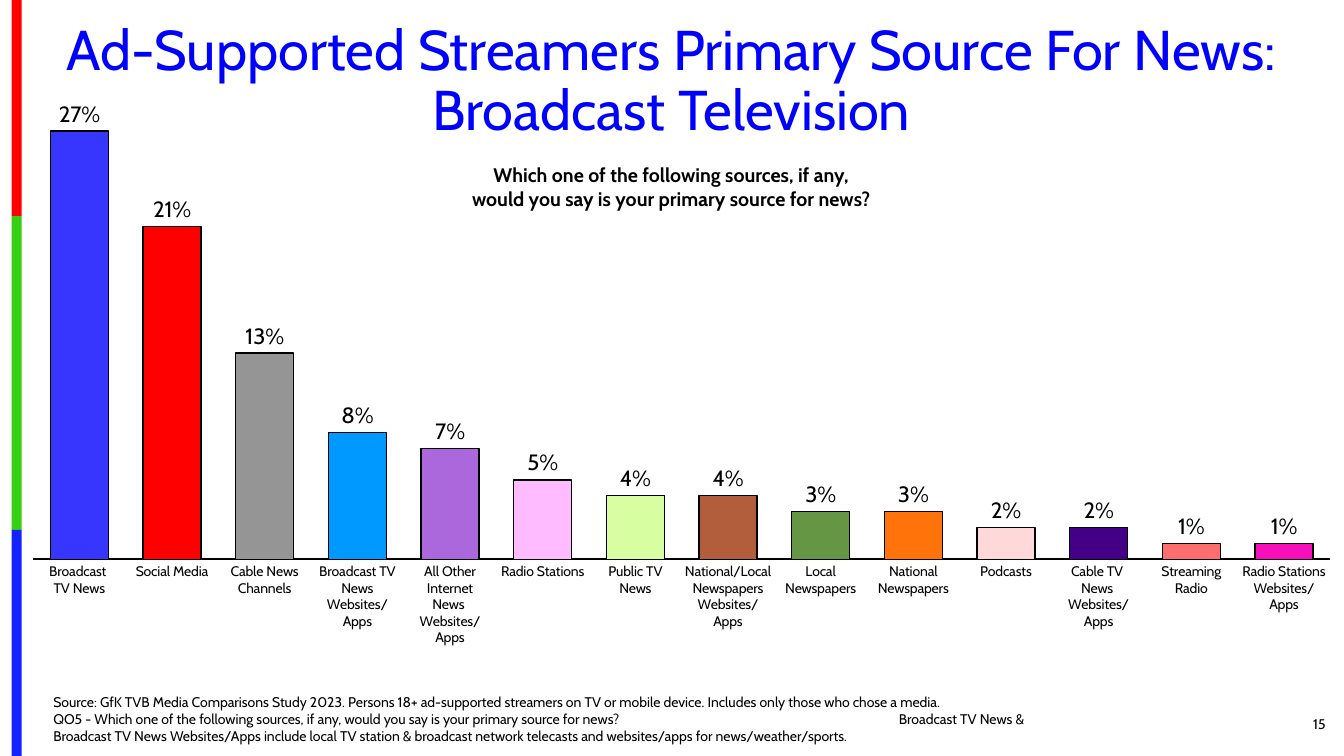
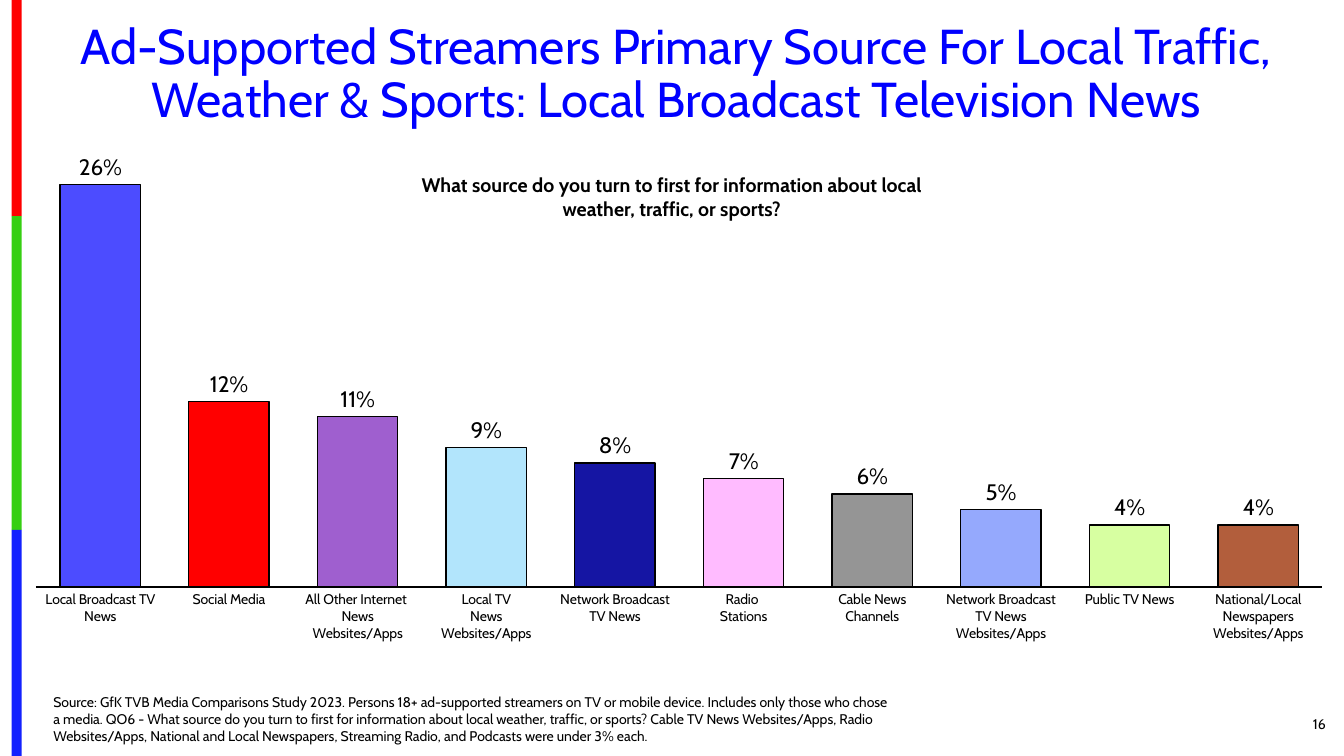
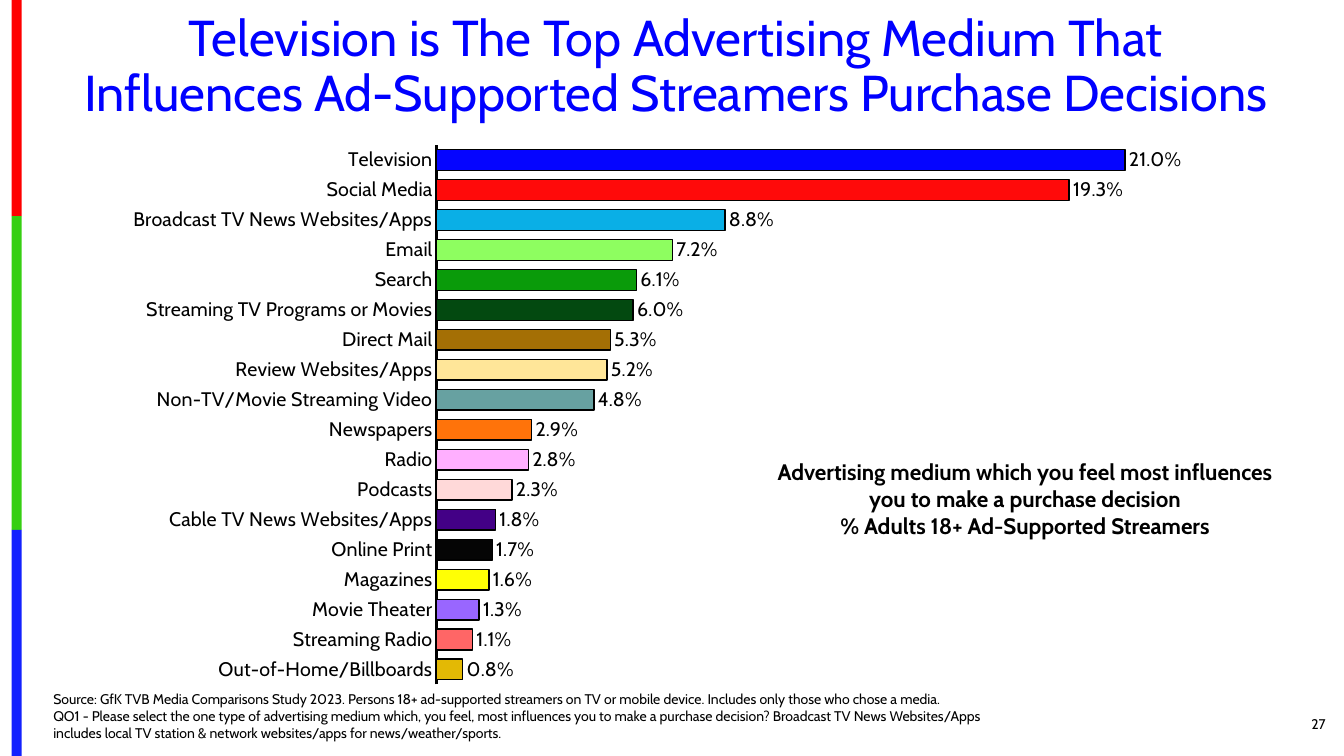
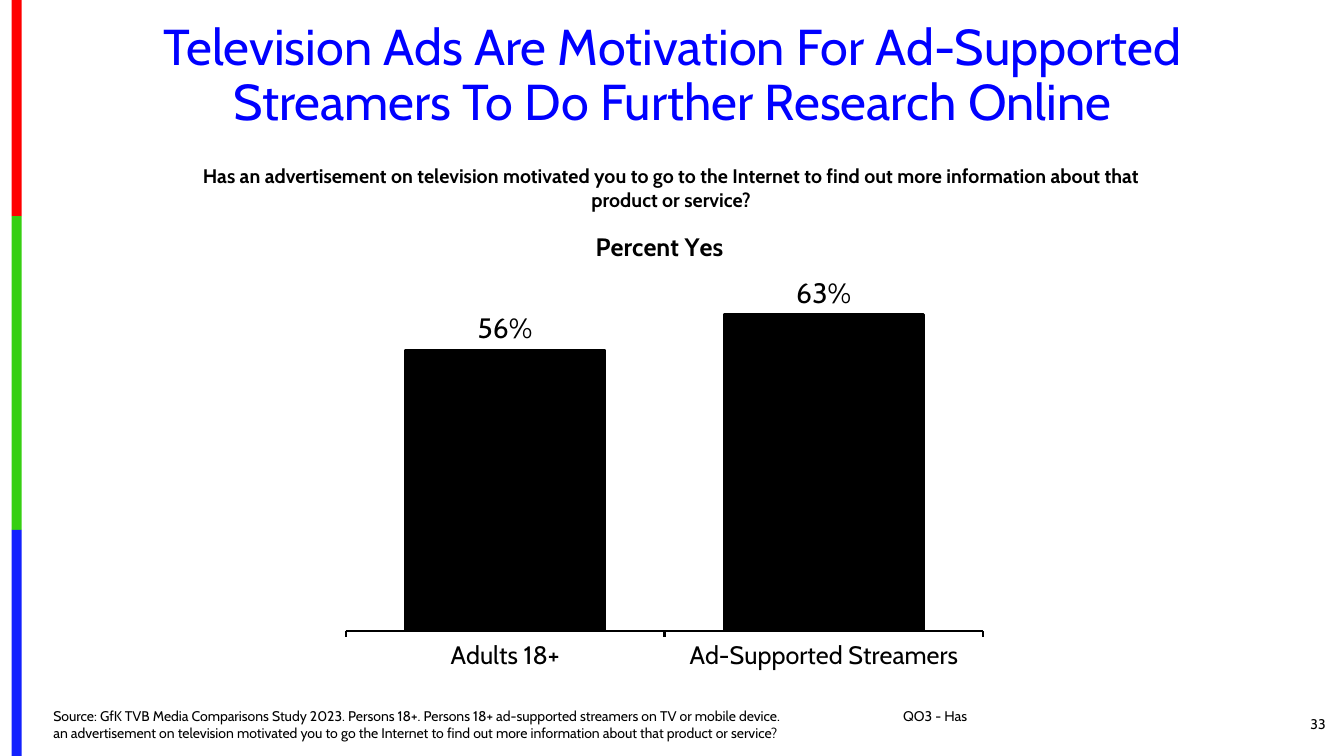
from dataclasses import dataclass

import pptx
import pptx.chart.data
import pptx.dml.color
import pptx.enum.chart
import pptx.enum.shapes
import pptx.enum.text
import pptx.oxml
import pptx.oxml.ns
import pptx.util

Pt = pptx.util.Pt
qn = pptx.oxml.ns.qn
ALIGN = pptx.enum.text.PP_ALIGN
ANCHOR = pptx.enum.text.MSO_ANCHOR
KIND = pptx.enum.chart.XL_CHART_TYPE
TICK = pptx.enum.chart.XL_TICK_MARK


@dataclass(frozen=True)
class Theme:
    font: str = "Cabin"
    ink: str = "000000"
    title: str = "0000FF"
    bands: tuple = (("FE0000", 154.5), ("36CF12", 224), ("1322FE", 161.5))
    band_left: float = 8.3
    band_width: float = 7.2
    small: float = 10
    question: float = 14
    axis_line: float = 1.5
    footer_left: float = 31
    number_box: tuple = (876.2, 502.6, 77.8, 28.8)


THEME = Theme()


def rgb(value):
    return pptx.dml.color.RGBColor.from_string(value)


def style_font(font, size, color=THEME.ink, bold=False):
    font.name = THEME.font
    font.size = Pt(size)
    font.bold = bold
    font.color.rgb = rgb(color)


def add_text(page, box, lines, size, color=THEME.ink, bold=False, align=ALIGN.LEFT,
             anchor=ANCHOR.TOP, spacing=None, tab=None):
    """Write one paragraph per line; tab is an optional left tab stop in points."""
    frame = page.shapes.add_textbox(*map(Pt, box)).text_frame
    frame.word_wrap = True
    frame.vertical_anchor = anchor
    for index, line in enumerate(lines):
        para = frame.paragraphs[0] if index == 0 else frame.add_paragraph()
        if tab and "\t" in line:
            para._p.get_or_add_pPr().append(pptx.oxml.parse_xml(
                f'<a:tabLst {pptx.oxml.ns.nsdecls("a")}>'
                f'<a:tab pos="{int(Pt(tab))}" algn="l"/></a:tabLst>'))
        para.alignment = align
        if spacing:
            para.line_spacing = spacing
        span = para.add_run()
        span.text = line
        style_font(span.font, size, color, bold)


def add_bands(page):
    top = 0
    for color, height in THEME.bands:
        band = page.shapes.add_shape(
            pptx.enum.shapes.MSO_SHAPE.RECTANGLE,
            Pt(THEME.band_left), Pt(top), Pt(THEME.band_width), Pt(height))
        band.shadow.inherit = False
        band.fill.solid()
        band.fill.fore_color.rgb = rgb(color)
        band.line.fill.background()
        top += height


def set_layout(owner, x, y, w=None, h=None):
    """Fix the place of a chart title or inner plot as fractions of the chart."""
    old = owner.find(qn("c:layout"))
    if old is not None:
        owner.remove(old)
    target = '<c:layoutTarget val="inner"/>' if w else ""
    size = f'<c:w val="{w}"/><c:h val="{h}"/>' if w else ""
    layout = pptx.oxml.parse_xml(
        f'<c:layout {pptx.oxml.ns.nsdecls("c")}><c:manualLayout>{target}'
        f'<c:xMode val="edge"/><c:yMode val="edge"/><c:x val="{x}"/><c:y val="{y}"/>'
        f'{size}</c:manualLayout></c:layout>')
    owner.insert(0 if owner.find(qn("c:tx")) is None else 1, layout)


def paint_bar(bar, color, line_width):
    bar.format.fill.solid()
    bar.format.fill.fore_color.rgb = rgb(color)
    bar.format.line.color.rgb = rgb(THEME.ink)
    bar.format.line.width = Pt(line_width)


def add_bar_chart(page, box, rows, plot_box, top_value, kind=KIND.COLUMN_CLUSTERED, gap=60,
                  axis_size=THEME.small, label_size=16, number_format="0%", tick=TICK.NONE,
                  line_width=1, title=None):
    """Rows are (category, percent, bar colour)."""
    data = pptx.chart.data.CategoryChartData(number_format=number_format)
    data.categories = [name for name, _, _ in rows]
    data.add_series("Series 1", [round(percent / 100, 3) for _, percent, _ in rows])
    chart = page.shapes.add_chart(kind, *map(Pt, box), data).chart
    style_font(chart.font, THEME.small)
    chart.has_legend = False
    chart.has_title = title is not None
    if title:
        span = chart.chart_title.text_frame.paragraphs[0].add_run()
        span.text = title
        style_font(span.font, 18, bold=True)
        set_layout(chart.chart_title.element, 0.38, 0.04)
    set_layout(chart.element.find(".//" + qn("c:plotArea")), *plot_box)

    values = chart.value_axis
    values.visible = False
    values.has_major_gridlines = False
    values.minimum_scale = 0
    values.maximum_scale = top_value / 100

    names = chart.category_axis
    names.reverse_order = kind == KIND.BAR_CLUSTERED
    names.major_tick_mark = tick
    names.minor_tick_mark = TICK.NONE
    names.format.line.color.rgb = rgb(THEME.ink)
    names.format.line.width = Pt(THEME.axis_line)
    style_font(names.tick_labels.font, axis_size)

    plot = chart.plots[0]
    plot.gap_width = gap
    plot.vary_by_categories = False
    plot.has_data_labels = True
    labels = plot.data_labels
    labels.show_value = True
    labels.number_format = number_format
    labels.number_format_is_linked = False
    labels.position = pptx.enum.chart.XL_LABEL_POSITION.OUTSIDE_END
    style_font(labels.font, label_size)

    series = plot.series[0]
    series.invert_if_negative = False
    paint_bar(series, rows[0][2], line_width)
    for index, (_, _, color) in enumerate(rows):
        paint_bar(series.points[index], color, line_width)


def add_title(page, box, size, lines):
    add_text(page, box, lines, size, THEME.title, align=ALIGN.CENTER, spacing=0.9)


def add_question(page, box, lines, size=THEME.question):
    add_text(page, box, lines, size, bold=True, align=ALIGN.CENTER)


def add_footer(page, number, width, bottom, lines, tab=None):
    height = 44
    add_text(page, (THEME.footer_left, bottom - height, width, height), lines, THEME.small,
             anchor=ANCHOR.BOTTOM, tab=tab)
    add_text(page, THEME.number_box, [number], THEME.small, align=ALIGN.RIGHT,
             anchor=ANCHOR.MIDDLE)


def new_page(deck):
    page = deck.slides.add_slide(deck.slide_layouts[6])
    add_bands(page)
    return page


def build_news(deck):
    page = new_page(deck)
    rows = [
        ("Broadcast \nTV News", 27, "3636FF"),
        ("Social Media", 21, "FF0000"),
        ("Cable News Channels", 13, "959595"),
        ("Broadcast TV News Websites/Apps", 8, "0099FF"),
        ("All Other Internet\nNews \nWebsites/Apps", 7, "AA68DC"),
        ("Radio Stations", 5, "FFBBFF"),
        ("Public TV News", 4, "D7FFA1"),
        ("National/Local Newspapers Websites/Apps", 4, "B25E3C"),
        ("Local Newspapers", 3, "659643"),
        ("National Newspapers", 3, "FF730A"),
        ("Podcasts", 2, "FFD9D9"),
        ("Cable TV \nNews \nWebsites/Apps", 2, "430086"),
        ("Streaming Radio", 1, "FF6E6E"),
        ("Radio Stations Websites/Apps", 1, "F60FBB"),
    ]
    add_bar_chart(page, (18, 29.5, 936, 432), rows, (0.006, 0.071, 0.99, 0.798), 30)
    add_title(page, (32.4, 12.2, 894.2, 94.3), 40,
              ["Ad-Supported Streamers Primary Source For News: Broadcast Television"])
    add_question(page, (269.3, 113, 420.5, 41),
                 ["Which one of the following sources, if any,",
                  "would you say is your primary source for news?"])
    add_footer(page, "15", 710, 535, [
        "Source: GfK TVB Media Comparisons Study 2023. Persons 18+ ad-supported streamers on TV "
        "or mobile device. Includes only those who chose a media.",
        "QO5 - Which one of the following sources, if any, would you say is your primary source "
        "for news?\tBroadcast TV News & Broadcast TV News Websites/Apps include local TV station "
        "& broadcast network telecasts and websites/apps for news/weather/sports."], tab=604)


def build_local(deck):
    page = new_page(deck)
    rows = [
        ("Local Broadcast TV News", 26, "4C4CFF"),
        ("Social Media", 12, "FF0000"),
        ("All Other Internet \nNews\nWebsites/Apps", 11, "9F5FCF"),
        ("Local TV\nNews Websites/Apps", 9, "B2E5FC"),
        ("Network Broadcast TV News", 8, "1515A3"),
        ("Radio \nStations", 7, "FFBBFF"),
        ("Cable News Channels", 6, "959595"),
        ("Network Broadcast TV News Websites/Apps", 5, "95A9FD"),
        ("Public TV News", 4, "D7FFA1"),
        ("National/Local Newspapers Websites/Apps", 4, "B25E3C"),
    ]
    add_bar_chart(page, (23.8, 49, 930.2, 442), rows, (0.002, 0.087, 0.988, 0.751), 30)
    add_title(page, (18, 12.2, 930.2, 83.5), 35,
              ["Ad-Supported Streamers Primary Source For Local Traffic, Weather & Sports: "
               "Local Broadcast Television News"])
    add_question(page, (283, 120.2, 393.8, 41),
                 ["What source do you turn to first for information about local weather, "
                  "traffic, or sports?"])
    add_footer(page, "16", 611.3, 535, [
        "Source: GfK TVB Media Comparisons Study 2023. Persons 18+ ad-supported streamers on TV "
        "or mobile device. Includes only those who chose a media. QO6 - What source do you turn "
        "to first for information about local weather, traffic, or sports? Cable TV News "
        "Websites/Apps, Radio Websites/Apps, National and Local Newspapers, Streaming Radio, "
        "and Podcasts were under 3% each."])


def build_influence(deck):
    page = new_page(deck)
    rows = [
        ("Television", 21.0, "0505FF"),
        ("Social Media", 19.3, "FF0A0A"),
        ("Broadcast TV News Websites/Apps", 8.8, "0AAFE6"),
        ("Email", 7.2, "8EFE60"),
        ("Search", 6.1, "0A9B0A"),
        ("Streaming TV Programs or Movies", 6.0, "034910"),
        ("Direct Mail", 5.3, "A46F05"),
        ("Review Websites/Apps", 5.2, "FFE699"),
        ("Non-TV/Movie Streaming Video", 4.8, "67A1A1"),
        ("Newspapers", 2.9, "FF730A"),
        ("Radio", 2.8, "FFAFFF"),
        ("Podcasts", 2.3, "FFD9D9"),
        ("Cable TV News Websites/Apps", 1.8, "430086"),
        ("Online Print", 1.7, "050505"),
        ("Magazines", 1.6, "FFFF05"),
        ("Movie Theater", 1.3, "9966FF"),
        ("Streaming Radio", 1.1, "FF6666"),
        ("Out-of-Home/Billboards", 0.8, "E3B905"),
    ]
    add_bar_chart(page, (33.1, 92.9, 879.1, 398.9), rows, (0.317, 0.027, 0.666, 0.966), 25,
                  kind=KIND.BAR_CLUSTERED, gap=45, axis_size=14, label_size=14,
                  number_format="0.0%")
    add_title(page, (23.8, 5.8, 918, 90), 36,
              ["Television is The Top Advertising Medium That",
               "Influences Ad-Supported Streamers Purchase Decisions"])
    add_question(page, (537.1, 324, 390.2, 65.5),
                 ["Advertising medium which you feel most influences you to make a purchase "
                  "decision", "% Adults 18+ Ad-Supported Streamers"], size=16)
    add_footer(page, "27", 701.3, 532.8, [
        "Source: GfK TVB Media Comparisons Study 2023. Persons 18+ ad-supported streamers on TV "
        "or mobile device. Includes only those who chose a media.",
        "QO1 - Please select the one type of advertising medium which, you feel, most influences "
        "you to make a purchase decision? Broadcast TV News Websites/Apps includes local TV "
        "station & network websites/apps for news/weather/sports."])


def build_research(deck):
    page = new_page(deck)
    rows = [("Adults 18+", 56, THEME.ink), ("Ad-Supported Streamers", 63, THEME.ink)]
    add_bar_chart(page, (246.2, 146.2, 462.2, 362.9), rows, (0, 0.147, 0.987, 0.692), 70,
                  axis_size=18, label_size=20, tick=TICK.OUTSIDE, line_width=1.5,
                  title="Percent Yes")
    add_title(page, (33.1, 12.2, 894.2, 85.7), 36,
              ["Television Ads Are Motivation For Ad-Supported Streamers To Do Further "
               "Research Online"])
    add_question(page, (134.6, 113.8, 689.8, 41),
                 ["Has an advertisement on television motivated you to go to the Internet to "
                  "find out more information about that product or service?"])
    add_footer(page, "33", 678.2, 532.8, [
        "Source: GfK TVB Media Comparisons Study 2023. Persons 18+. Persons 18+ ad-supported "
        "streamers on TV or mobile device.\tQO3 - Has an advertisement on television motivated "
        "you to go the Internet to find out more information about that product or service?"],
        tab=607)


def main():
    deck = pptx.Presentation()
    deck.slide_width, deck.slide_height = Pt(960), Pt(540)
    for build in (build_news, build_local, build_influence, build_research):
        build(deck)
    deck.save("out.pptx")


if __name__ == "__main__":
    main()
